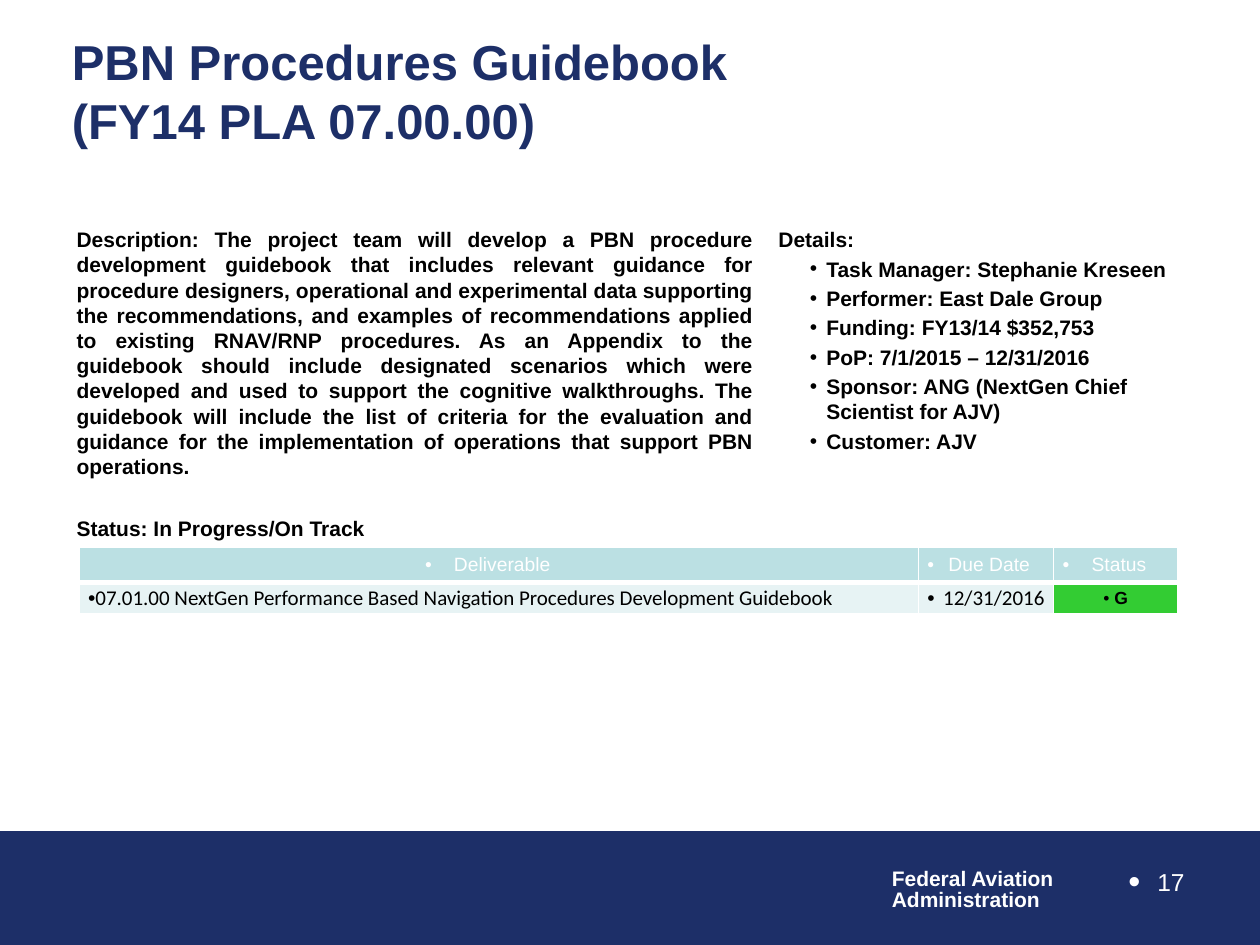
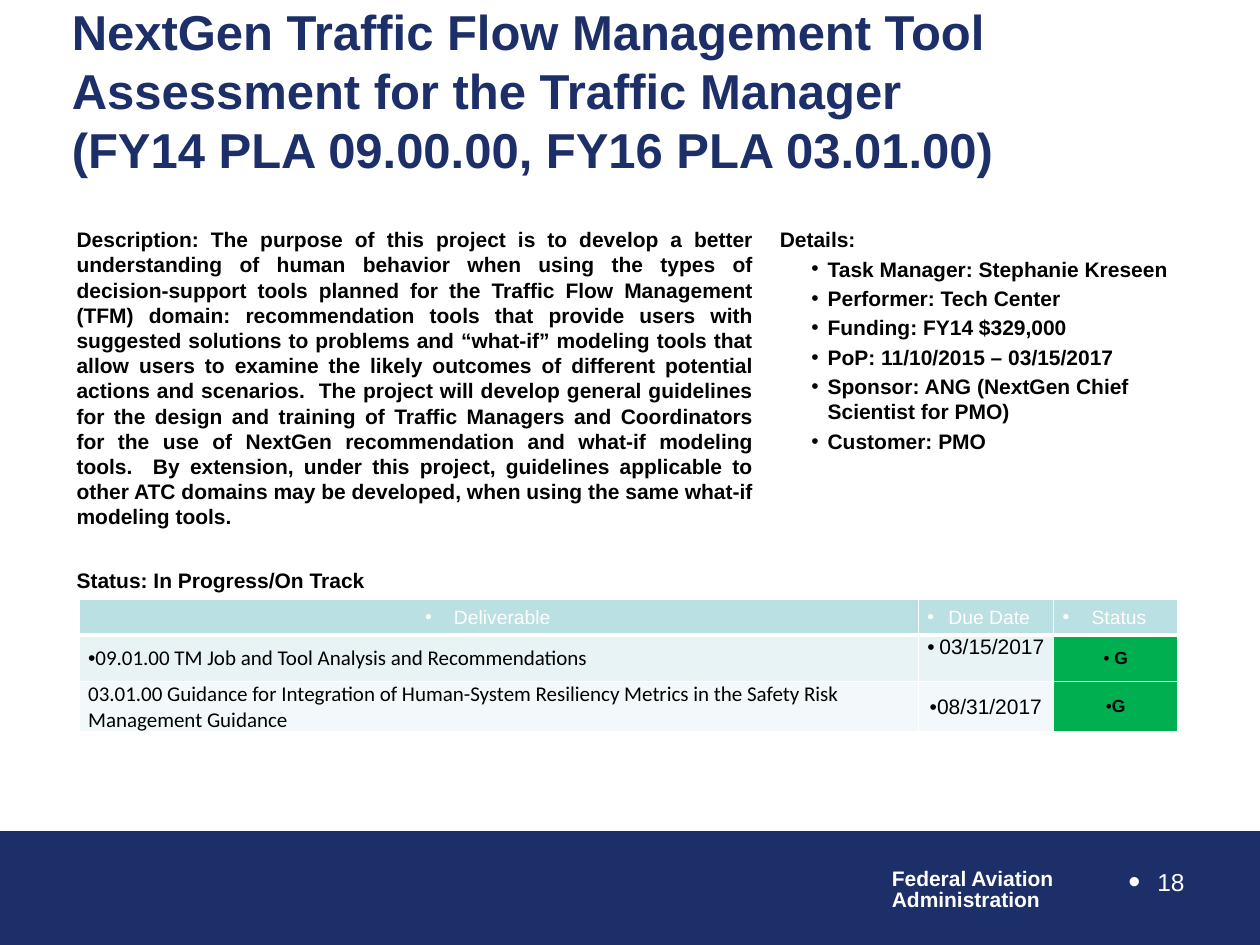
from copy import deepcopy

from lxml import etree
from pptx import Presentation
from pptx import util as u
from pptx.dml.color import RGBColor
from pptx.enum import shapes, text
from pptx.oxml.ns import qn

NAVY = RGBColor(0x1D, 0x2F, 0x68)
WHITE = RGBColor(0xFF, 0xFF, 0xFF)
BLACK = RGBColor(0x00, 0x00, 0x00)
HEADER_TEAL = RGBColor(0xBB, 0xE0, 0xE3)
ROW_TINTS = (RGBColor(0xE7, 0xF3, 0xF4), RGBColor(0xF3, 0xF9, 0xFA))
LIME = RGBColor(0x33, 0xCC, 0x33)
GREEN = RGBColor(0x00, 0xB0, 0x50)

LEFT, CENTER = text.PP_ALIGN.LEFT, text.PP_ALIGN.CENTER
RIGHT, JUSTIFY = text.PP_ALIGN.RIGHT, text.PP_ALIGN.JUSTIFY
TOP, MIDDLE = text.MSO_ANCHOR.TOP, text.MSO_ANCHOR.MIDDLE

GRID_COLUMNS, GRID_ROWS = 100, 75
DELIVERABLE_COLUMNS = (66.6, 10.7, 9.9)
HANGING = -0.23


def write(paragraph, content, size=12, font="Arial", color=BLACK, bold=False,
          align=LEFT, before=0, spacing=None, bullet=False, margin=0, indent=0,
          bullet_size=None):
    properties = paragraph._p.get_or_add_pPr()
    properties.set("marL", str(u.Inches(margin)))
    properties.set("indent", str(u.Inches(indent)))
    if bullet_size:
        etree.SubElement(properties, qn("a:buSzPct"), val=str(bullet_size * 1000))
    if bullet:
        etree.SubElement(properties, qn("a:buFont"), typeface="Arial")
        etree.SubElement(properties, qn("a:buChar"), char="•")
    else:
        etree.SubElement(properties, qn("a:buNone"))
    paragraph.text = content
    paragraph.alignment = align
    paragraph.space_before = u.Pt(before)
    if spacing:
        paragraph.line_spacing = spacing
    for run in paragraph.runs:
        run.font.size = u.Pt(size)
        run.font.name = font
        run.font.bold = bold
        run.font.color.rgb = color
    for line_break in paragraph._p.findall(qn("a:br")):
        line_break.insert(0, deepcopy(paragraph.runs[0]._r.rPr))


class Deck:
    def __init__(self):
        self.prs = Presentation()
        self.prs.slide_width = u.Inches(10)
        self.prs.slide_height = u.Inches(7.5)
        self.slide = None

    def across(self, columns):
        return round(self.prs.slide_width * columns / GRID_COLUMNS)

    def down(self, rows):
        return round(self.prs.slide_height * rows / GRID_ROWS)

    def box(self, left, top, width, height):
        return self.across(left), self.down(top), self.across(width), self.down(height)

    def start(self, title, number):
        self.slide = self.prs.slides.add_slide(self.prs.slide_layouts[5])
        self.band()
        self.textbox((69.8, 68.5, 15, 4.4), ["Federal Aviation", "Administration"],
                     wrap=False, color=WHITE, bold=True, spacing=0.85)
        self.title(title)
        self.textbox((71.7, 68.3, 23.3, 5.2), [str(number)], size=14, color=WHITE,
                     align=RIGHT, bullet=True, indent=HANGING, bullet_size=140)

    def band(self):
        band = self.slide.shapes.add_shape(shapes.MSO_SHAPE.RECTANGLE,
                                           *self.box(0, 66, 100, 8.95))
        band.shadow.inherit = False
        band.fill.solid()
        band.fill.fore_color.rgb = NAVY
        band.line.color.rgb = NAVY
        band.line.width = u.Pt(0.75)

    def title(self, content):
        title = self.slide.shapes.title
        title.left, title.top, title.width, title.height = self.box(4.7, 3.8, 92.7, 6.7)
        frame = title.text_frame
        frame.word_wrap = True
        frame.auto_size = text.MSO_AUTO_SIZE.NONE
        frame.vertical_anchor = MIDDLE
        write(frame.paragraphs[0], content, size=28, color=NAVY, bold=True)

    def textbox(self, area, lines, wrap=True, **style):
        frame = self.slide.shapes.add_textbox(*self.box(*area)).text_frame
        frame.word_wrap = wrap
        for position, line in enumerate(lines):
            paragraph = frame.add_paragraph() if position else frame.paragraphs[0]
            write(paragraph, line, **style)
        return frame

    def description(self, content):
        self.textbox((5.1, 17.5, 55.7, 22.9), [content], bold=True, align=JUSTIFY)

    def details(self, left, facts):
        frame = self.textbox((left, 17.5, 34.5, 22.9), ["Details:"], bold=True)
        for label, value in facts.items():
            write(frame.add_paragraph(), f"{label}: {value}", bold=True, before=2.4,
                  bullet=True, margin=0.38, indent=-0.13)

    def status(self, top, row_heights, deliverables, on_track):
        self.textbox((5.1, top, 88.3, 3), ["Status: In Progress/On Track"],
                     bold=True, align=JUSTIFY)
        table = self.slide.shapes.add_table(
            len(row_heights), len(DELIVERABLE_COLUMNS),
            *self.box(6.3, top + 3.05, sum(DELIVERABLE_COLUMNS), sum(row_heights))).table
        table.first_row = table.horz_banding = False
        for column, width in zip(table.columns, DELIVERABLE_COLUMNS):
            column.width = self.across(width)
        for row, height in zip(table.rows, row_heights):
            row.height = self.down(height)
        for column, heading in enumerate(("Deliverable", "Due Date", "Status")):
            self.cell(table.cell(0, column), heading, HEADER_TEAL, bottom=3, size=11,
                      color=WHITE, align=CENTER, bullet=True, indent=HANGING)
        for row, (name, due, grade) in enumerate(deliverables, 1):
            tint = ROW_TINTS[(row - 1) % 2]
            above = 3 if row == 1 else 1
            self.cell(table.cell(row, 0), fill=tint, top=above, font="Calibri", **name)
            self.cell(table.cell(row, 1), fill=tint, top=above, bullet=True, **due)
            self.cell(table.cell(row, 2), grade, on_track, top=above, size=10,
                      bold=True, align=CENTER, bullet=True)

    def cell(self, cell, content, fill, top=1, bottom=1, anchor=MIDDLE, **style):
        cell.margin_left = cell.margin_right = u.Inches(0.07)
        cell.margin_top = cell.margin_bottom = 0
        cell.vertical_anchor = anchor
        for side, width in (("L", 1), ("R", 1), ("T", top), ("B", bottom)):
            border = etree.SubElement(cell._tc.get_or_add_tcPr(), qn(f"a:ln{side}"),
                                      w=str(u.Pt(width)))
            paint = etree.SubElement(border, qn("a:solidFill"))
            etree.SubElement(paint, qn("a:srgbClr"), val=str(WHITE))
        cell.fill.solid()
        cell.fill.fore_color.rgb = fill
        write(cell.text_frame.paragraphs[0], content, **style)


def guidebook(deck):
    deck.start("PBN Procedures Guidebook\v(FY14 PLA 07.00.00)", 17)
    deck.details(60.8, {
        "Task Manager": "Stephanie Kreseen",
        "Performer": "East Dale Group",
        "Funding": "FY13/14 $352,753",
        "PoP": "7/1/2015 – 12/31/2016",
        "Sponsor": "ANG (NextGen Chief Scientist for AJV)",
        "Customer": "AJV",
    })
    deck.description(
        "Description: The project team will develop a PBN procedure development "
        "guidebook that includes relevant guidance for procedure designers, operational "
        "and experimental data supporting the recommendations, and examples of "
        "recommendations applied to existing RNAV/RNP procedures. As an Appendix to the "
        "guidebook should include designated scenarios which were developed and used to "
        "support the cognitive walkthroughs. The guidebook will include the list of "
        "criteria for the evaluation and guidance for the implementation of operations "
        "that support PBN operations.")
    deck.status(40.4, (2.8, 2.5), [
        (dict(content="07.01.00 NextGen Performance Based Navigation Procedures "
                      "Development Guidebook", bullet=True),
         dict(content="12/31/2016", font="Calibri", align=RIGHT, indent=HANGING),
         " G"),
    ], LIME)


def traffic_flow(deck):
    deck.start("NextGen Traffic Flow Management Tool Assessment for the Traffic Manager"
               "\v(FY14 PLA 09.00.00, FY16 PLA 03.01.00)", 18)
    deck.details(60.9, {
        "Task Manager": "Stephanie Kreseen",
        "Performer": "Tech Center",
        "Funding": "FY14 $329,000",
        "PoP": "11/10/2015 – 03/15/2017",
        "Sponsor": "ANG (NextGen Chief Scientist for PMO)",
        "Customer": "PMO",
    })
    deck.description(
        "Description: The purpose of this project is to develop a better understanding "
        "of human behavior when using the types of decision-support tools planned for "
        "the Traffic Flow Management (TFM) domain: recommendation tools that provide "
        "users with suggested solutions to problems and “what-if” modeling tools that "
        "allow users to examine the likely outcomes of different potential actions and "
        "scenarios.  The project will develop general guidelines for the design and "
        "training of Traffic Managers and Coordinators for the use of NextGen "
        "recommendation and what-if modeling tools.  By extension, under this project, "
        "guidelines applicable to other ATC domains may be developed, when using the "
        "same what-if modeling tools.")
    deck.status(44.55, (2.8, 3.7, 4), [
        (dict(content="09.01.00 TM Job and Tool Analysis and Recommendations", bullet=True),
         dict(content="03/15/2017", align=RIGHT, indent=HANGING, anchor=TOP),
         " G"),
        (dict(content="03.01.00 Guidance for Integration of Human-System Resiliency "
                      "Metrics in the Safety Risk Management Guidance"),
         dict(content="08/31/2017", align=CENTER),
         "G"),
    ], GREEN)


def main():
    deck = Deck()
    guidebook(deck)
    traffic_flow(deck)
    deck.prs.save("out.pptx")


if __name__ == "__main__":
    main()
